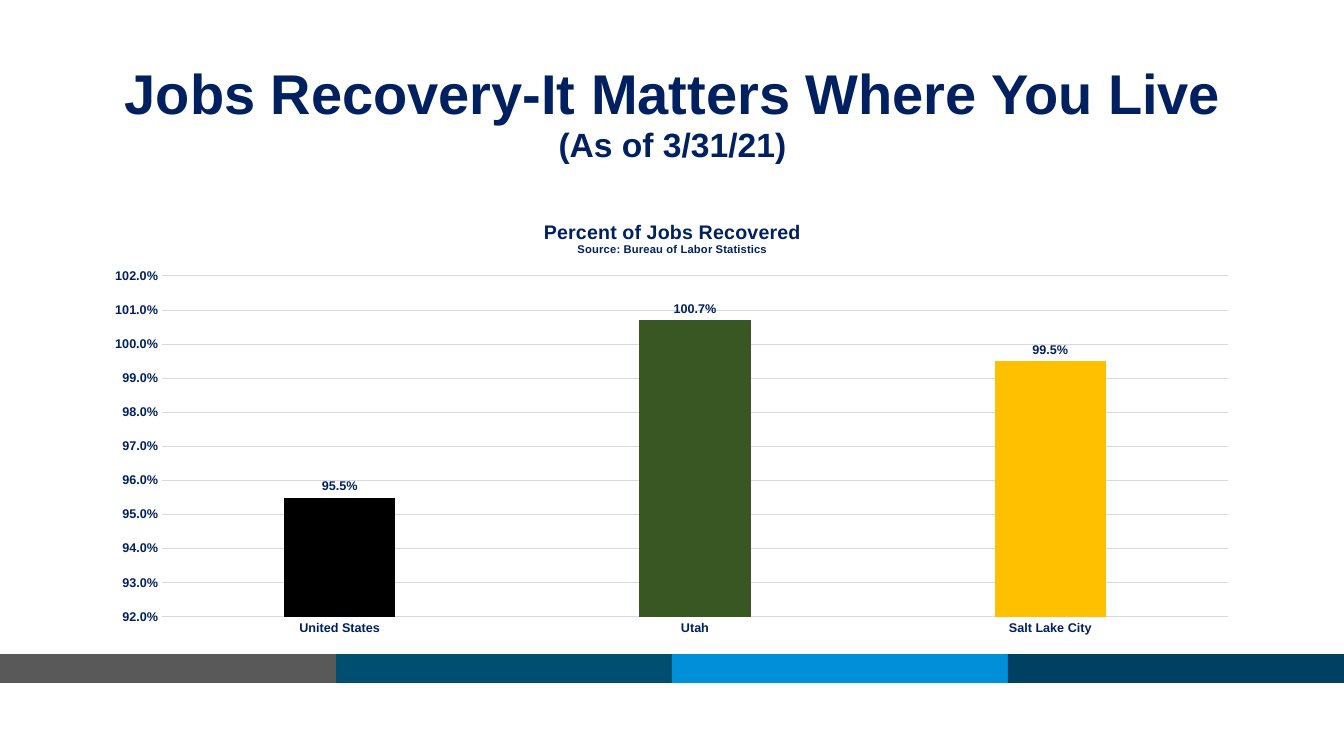
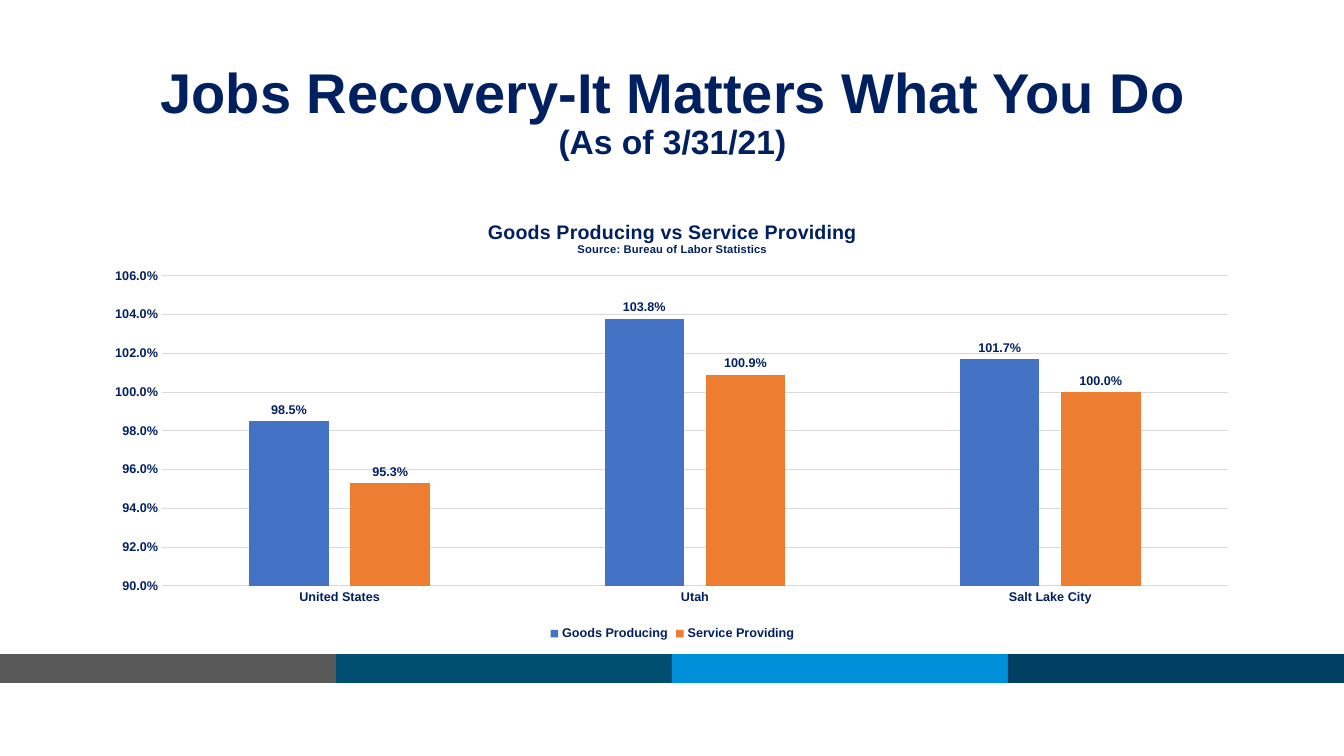
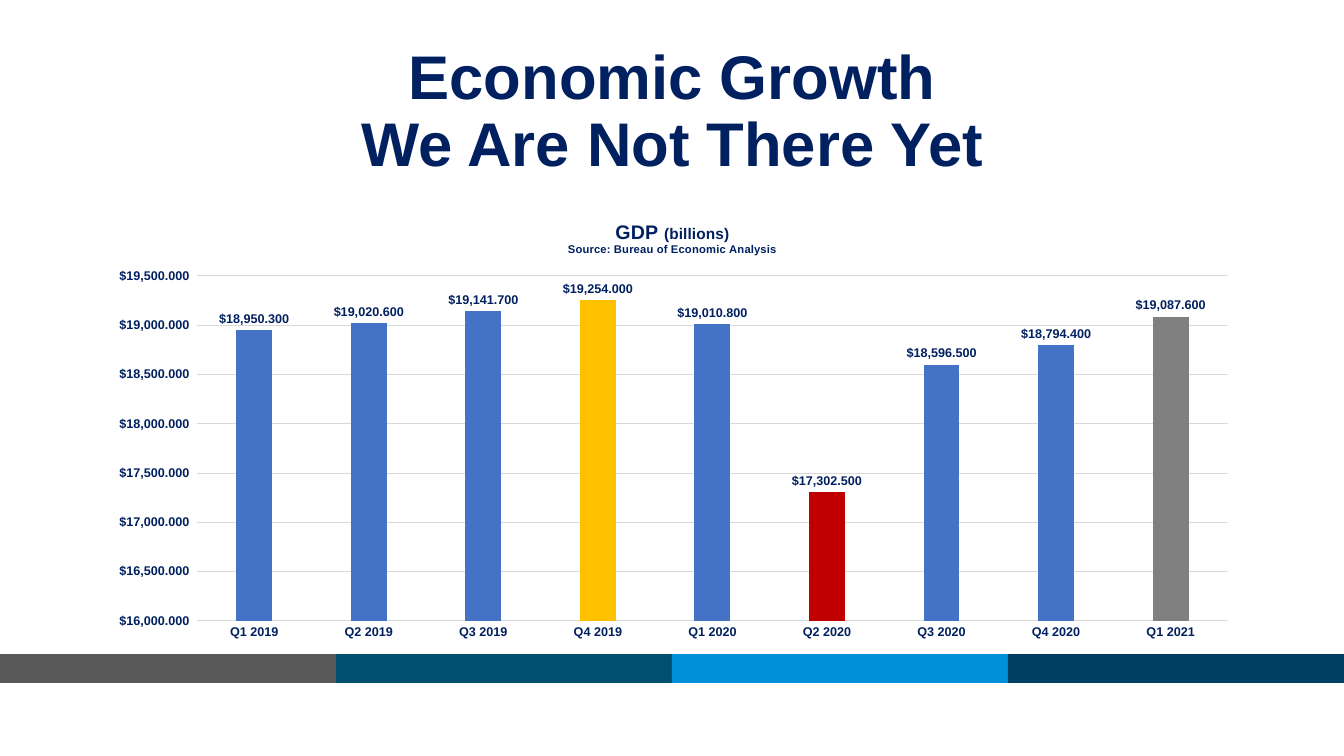
from pptx import Presentation
from pptx.chart.data import CategoryChartData
from pptx.dml.color import RGBColor
from pptx.enum.chart import XL_CHART_TYPE as CHART, XL_LABEL_POSITION as LABEL
from pptx.enum.chart import XL_LEGEND_POSITION as LEGEND, XL_TICK_MARK as TICK
from pptx.enum.shapes import MSO_SHAPE as SHAPE
from pptx.enum.text import MSO_ANCHOR as ANCHOR, PP_ALIGN as ALIGN
from pptx.oxml import parse_xml
from pptx.oxml.ns import nsdecls, qn
from pptx.util import Pt

PX = 12192000 / 1344
WIDTH, HEIGHT = 1344, 756
NAVY, GRID = "002060", "D9D9D9"
BLUE, ORANGE, GOLD = "4472C4", "ED7D31", "FFC000"
BANDS = ["595959", "004F71", "0090DA", "004163"]
LEFT, CHART_TOP, CONTENT_WIDTH = 93, 202, 1159
PERCENT, DOLLARS = "0.0%", '_("$"* #,##0.000_)'
PLACES = ["United States", "Utah", "Salt Lake City"]
QUARTERS = [f"Q{q} {year}" for year in (2019, 2020) for q in (1, 2, 3, 4)] + ["Q1 2021"]
AS_OF = ("(As of 3/31/21)", 24)
LABOR = [("Source: Bureau of Labor Statistics", 8)]

# Titles are lists of lines; each line is a list of (text, size) runs.
# "plot" is left, top, right, bottom; "axis" is minimum, maximum, step.
SLIDES = [
    dict(title=[[("Jobs Recovery-It Matters Where You Live", 40), (" ", 44), AS_OF]],
         chart_title=[[("Percent of Jobs Recovered", 14)], LABOR],
         height=444, plot=(162, 276, 1228, 617), axis=(0.92, 1.02, 0.01),
         format=PERCENT, categories=PLACES,
         series=[("Series 1", GOLD, [0.955, 1.007, 0.995])],
         points={0: "000000", 1: "385723"}),
    dict(title=[[("Jobs Recovery-It Matters What You Do", 40)], [AS_OF]],
         chart_title=[[("Goods Producing vs Service Providing", 14)], LABOR],
         height=443, plot=(162, 276, 1228, 586), axis=(0.9, 1.06, 0.02),
         format=PERCENT, categories=PLACES,
         series=[("Goods Producing", BLUE, [0.985, 1.038, 1.017]),
                 ("Service Providing", ORANGE, [0.953, 1.009, 1])],
         points={}),
    dict(title=[[("Economic Growth", 44)], [("We Are Not There Yet", 44)]],
         chart_title=[[("GDP ", 14), ("(billions)", 11)],
                      [("Source: Bureau of Economic Analysis", 8)]],
         height=448, plot=(197, 276, 1228, 621), axis=(16000, 19500, 500),
         format=DOLLARS, categories=QUARTERS,
         series=[("Series 1", BLUE, [18950.3, 19020.6, 19141.7, 19254, 19010.8,
                                     17302.5, 18596.5, 18794.4, 19087.6])],
         points={3: GOLD, 5: "C00000", 8: "808080"}),
]


def px(*lengths):
    return [round(n * PX) for n in lengths]


def style(font, size):
    """Give a font the bold navy Arial that all text shares."""
    for name, value in dict(name="Arial", size=Pt(size), bold=True).items():
        setattr(font, name, value)
    font.color.rgb = RGBColor.from_string(NAVY)


prs = Presentation()
prs.slide_width, prs.slide_height = px(WIDTH, HEIGHT)

for data in SLIDES:
    s = prs.slides.add_slide(prs.slide_layouts[6])

    # Colour bands
    band_width = WIDTH // len(BANDS)
    for i, color in enumerate(BANDS):
        band = s.shapes.add_shape(SHAPE.RECTANGLE, *px(i * band_width, 654, band_width, 29))
        band.shadow.inherit = False
        band.fill.solid()
        band.fill.fore_color.rgb = RGBColor.from_string(color)
        band.line.fill.background()

    # Slide title
    tf = s.shapes.add_textbox(*px(LEFT, 40, CONTENT_WIDTH, 146)).text_frame
    tf.word_wrap = True
    tf.vertical_anchor = ANCHOR.MIDDLE
    p = tf.paragraphs[0]
    p.alignment, p.line_spacing = ALIGN.CENTER, 0.9
    for i, line in enumerate(data["title"]):
        if i:
            p.add_line_break()
        for text, size in line:
            r = p.add_run()
            r.text = text
            style(r.font, size)

    # Column chart
    chart_data = CategoryChartData(number_format=data["format"])
    chart_data.categories = data["categories"]
    for name, _, values in data["series"]:
        chart_data.add_series(name, values)
    frame = px(LEFT, CHART_TOP, CONTENT_WIDTH, data["height"])
    chart = s.shapes.add_chart(CHART.COLUMN_CLUSTERED, *frame, chart_data).chart
    style(chart.font, 9)

    tf = chart.chart_title.text_frame
    for i, line in enumerate(data["chart_title"]):
        p = tf.add_paragraph() if i else tf.paragraphs[0]
        for text, size in line:
            r = p.add_run()
            r.text = text
            style(r.font, size)
    chart.chart_title.include_in_layout = False

    chart.has_legend = len(data["series"]) > 1
    if chart.has_legend:
        chart.legend.position = LEGEND.BOTTOM
        chart.legend.include_in_layout = False
        style(chart.legend.font, 9)

    plot = chart.plots[0]
    plot.gap_width, plot.overlap, plot.vary_by_categories = 219, -27, False
    for series, (_, color, _) in zip(plot.series, data["series"]):
        series.invert_if_negative = False
        series.format.fill.solid()
        series.format.fill.fore_color.rgb = RGBColor.from_string(color)
        labels = series.data_labels
        for name, value in dict(show_value=True, position=LABEL.OUTSIDE_END,
                                number_format=data["format"],
                                number_format_is_linked=False).items():
            setattr(labels, name, value)
        style(labels.font, 9)
    for i, color in data["points"].items():
        fill = plot.series[0].points[i].format.fill
        fill.solid()
        fill.fore_color.rgb = RGBColor.from_string(color)

    cat_axis, val_axis = chart.category_axis, chart.value_axis
    for axis in (cat_axis, val_axis):
        axis.major_tick_mark = axis.minor_tick_mark = TICK.NONE
        style(axis.tick_labels.font, 9)
    val_axis.minimum_scale, val_axis.maximum_scale, val_axis.major_unit = data["axis"]
    val_axis.tick_labels.number_format = data["format"]
    val_axis.tick_labels.number_format_is_linked = False
    val_axis.format.line.fill.background()
    for line in (cat_axis.format.line, val_axis.major_gridlines.format.line):
        line.color.rgb = RGBColor.from_string(GRID)
        line.width = Pt(0.75)

    # Plot area as fractions of the chart frame
    left, top, right, bottom = data["plot"]
    fractions = dict(x=(left - LEFT) / CONTENT_WIDTH, y=(top - CHART_TOP) / data["height"],
                     w=(right - left) / CONTENT_WIDTH, h=(bottom - top) / data["height"])
    modes = '<c:xMode val="edge"/><c:yMode val="edge"/>'
    sizes = "".join(f'<c:{k} val="{v:.4f}"/>' for k, v in fractions.items())
    area = chart._chartSpace.find(".//" + qn("c:plotArea"))
    for layout in area.findall(qn("c:layout")):
        area.remove(layout)
    area.insert(0, parse_xml(
        f'<c:layout {nsdecls("c")}><c:manualLayout><c:layoutTarget val="inner"/>'
        f'{modes}{sizes}</c:manualLayout></c:layout>'))

prs.save("out.pptx")
